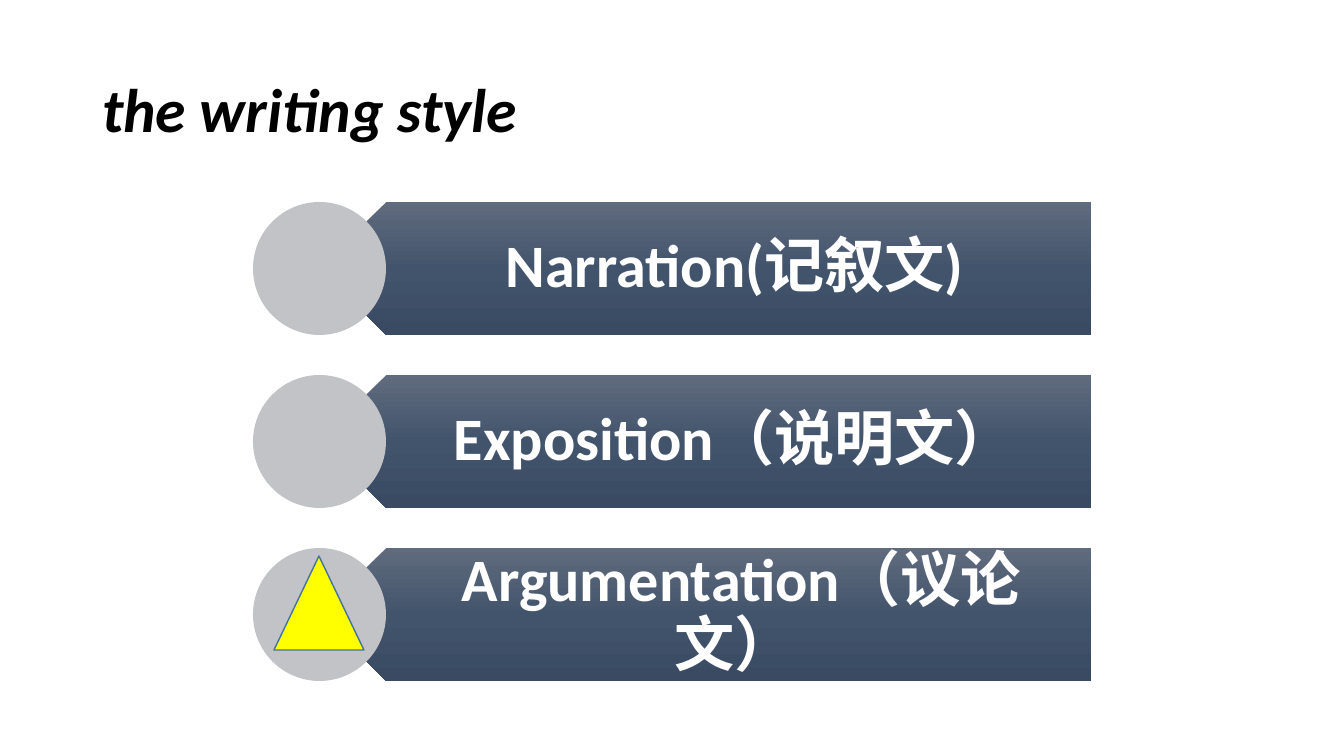
"""Build the writing style slide: three labelled bars, the last one marked."""
from copy import deepcopy

from pptx import Presentation
from pptx.dml.color import RGBColor
from pptx.enum.shapes import MSO_SHAPE as Shape
from pptx.enum.text import MSO_ANCHOR as Anchor, PP_ALIGN as Align
from pptx.util import Pt

TITLE = "the writing style"
STYLES = ["Narration(记叙文)", "Exposition（说明文）", " Argumentation（议论文）"]
COLORS = {"title": "000000", "label": "FFFFFF", "circle": "C1C3C7",
          "marker": "FFFF00", "marker_line": "43739E"}
BAR_GRADIENT = ["606B7D", "42546C", "394A62"]
FONT = "Calibri"

SLIDE_WIDTH, SLIDE_HEIGHT = 1344, 756
EMU_PER_PX = 12192000 / SLIDE_WIDTH
TITLE_BOX = (92, 40, 1159, 146)
FIRST_TOP, ROW_PITCH, ROW_HEIGHT = 202, 173, 133
CIRCLE_LEFT, BAR_RIGHT = 253, 1091
BAR_LEFT = CIRCLE_LEFT + ROW_HEIGHT // 2 + 1
LABEL_LEFT = BAR_LEFT + ROW_HEIGHT // 4
LABEL_INSETS = (58, 18, 33, 18)
MARKER_BOX = (274, 556, 90, 94)


def px(length):
    return round(length * EMU_PER_PX)


def place(box):
    return [px(length) for length in box]


def color(name):
    return RGBColor.from_string(COLORS[name])


def set_text(shape, text, size, color_name, italic=None):
    frame = shape.text_frame
    frame.text = text
    frame.word_wrap = True
    frame.vertical_anchor = Anchor.MIDDLE
    paragraph = frame.paragraphs[0]
    paragraph.line_spacing = 0.9
    font = paragraph.runs[0].font
    font.name, font.size, font.bold, font.italic = FONT, Pt(size), True, italic
    font.color.rgb = color(color_name)
    return paragraph


def add_plain_shape(slide, kind, box, color_name=None):
    shape = slide.shapes.add_shape(kind, *place(box))
    shape.shadow.inherit = False
    shape.line.fill.background()
    if color_name:
        shape.fill.solid()
        shape.fill.fore_color.rgb = color(color_name)
    return shape


def add_bar(slide, top):
    box = (BAR_LEFT, top, BAR_RIGHT - BAR_LEFT, ROW_HEIGHT)
    bar = add_plain_shape(slide, Shape.PENTAGON, box)
    bar._element.spPr.xfrm.set("flipH", "1")
    bar.fill.gradient()
    bar.fill.gradient_angle = 270
    first_stop = bar.fill.gradient_stops[0]._gs
    first_stop.addnext(deepcopy(first_stop))
    for index, stop in enumerate(bar.fill.gradient_stops):
        stop.position = index / (len(BAR_GRADIENT) - 1)
        stop.color.rgb = RGBColor.from_string(BAR_GRADIENT[index])


def add_label(slide, text, top):
    box = (LABEL_LEFT, top, BAR_RIGHT - LABEL_LEFT, ROW_HEIGHT)
    label = slide.shapes.add_textbox(*place(box))
    frame = label.text_frame
    (frame.margin_left, frame.margin_top,
     frame.margin_right, frame.margin_bottom) = place(LABEL_INSETS)
    set_text(label, text, 43, "label").alignment = Align.CENTER


def main():
    presentation = Presentation()
    presentation.slide_width = px(SLIDE_WIDTH)
    presentation.slide_height = px(SLIDE_HEIGHT)
    slide = presentation.slides.add_slide(presentation.slide_layouts[5])

    title = slide.shapes.title
    title.left, title.top, title.width, title.height = place(TITLE_BOX)
    set_text(title, TITLE, 44, "title", italic=True).alignment = Align.LEFT

    for row, style in enumerate(STYLES):
        top = FIRST_TOP + row * ROW_PITCH
        add_bar(slide, top)
        add_label(slide, style, top)
        circle_box = (CIRCLE_LEFT, top, ROW_HEIGHT, ROW_HEIGHT)
        add_plain_shape(slide, Shape.OVAL, circle_box, "circle")

    marker = add_plain_shape(slide, Shape.ISOSCELES_TRIANGLE, MARKER_BOX, "marker")
    marker.line.color.rgb = color("marker_line")
    marker.line.width = Pt(1)

    presentation.save("out.pptx")


if __name__ == "__main__":
    main()
